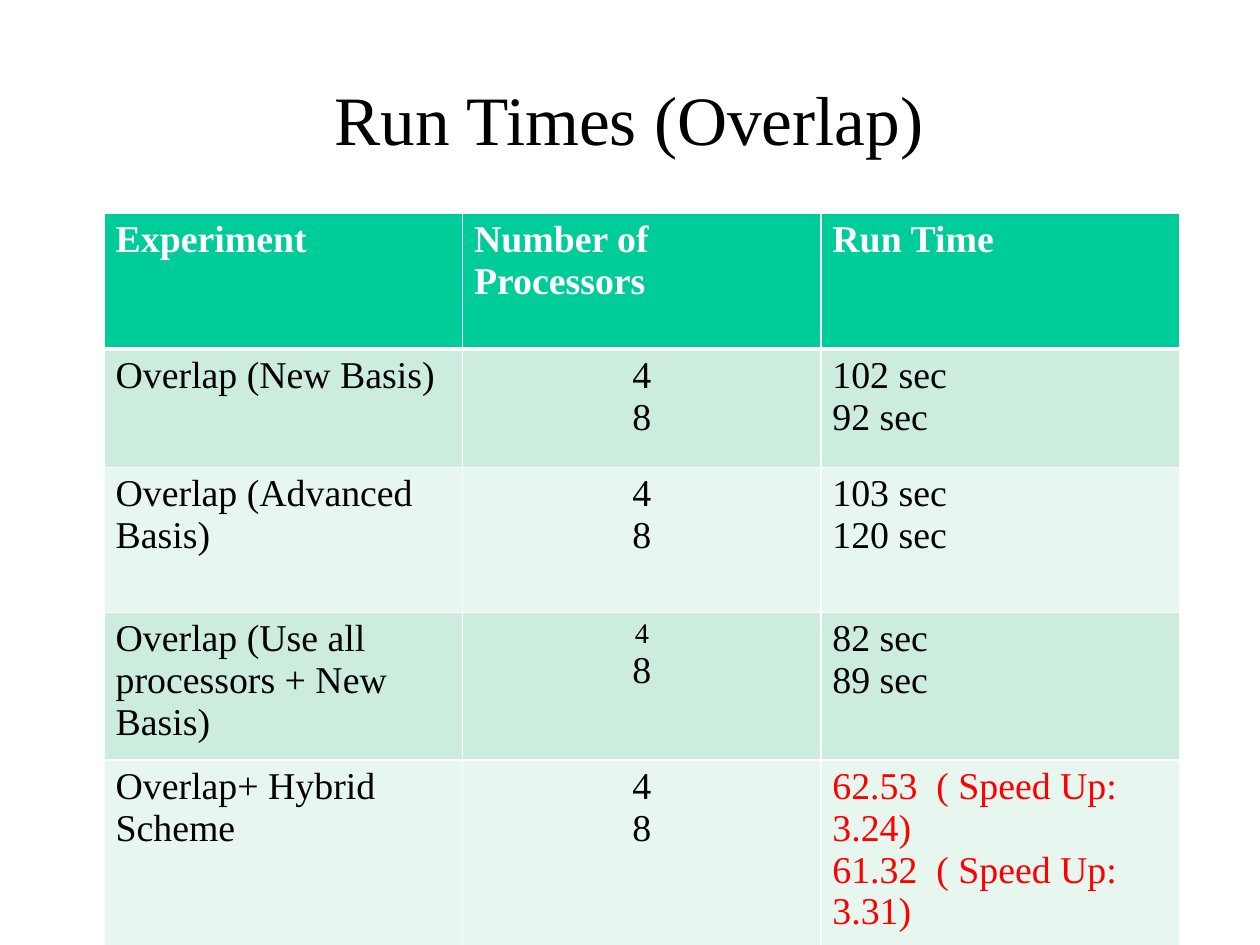
from lxml import etree
from pptx import Presentation
from pptx.dml.color import RGBColor
from pptx.enum.text import MSO_ANCHOR, PP_ALIGN
from pptx.oxml.ns import qn
from pptx.util import Emu, Pt

LEFT, CENTER = PP_ALIGN.LEFT, PP_ALIGN.CENTER
MIDDLE = MSO_ANCHOR.MIDDLE
PX = 9144  # 100 px to the inch
FONT = "Times New Roman"

BLACK = RGBColor(0x00, 0x00, 0x00)
WHITE = RGBColor(0xFF, 0xFF, 0xFF)
RED = RGBColor(0xFF, 0x00, 0x00)
GREEN = RGBColor(0x00, 0xCC, 0x99)
MINT = RGBColor(0xCC, 0xEC, 0xDE)
PALE = RGBColor(0xE7, 0xF6, 0xEF)

HEADS = ["Experiment", "Number of Processors", "Run Time"]
# Experiment, then run times on 4 and 8 processors
RUNS = [
    ("Overlap (New Basis)", ["102 sec", "92 sec"]),
    ("Overlap (Advanced Basis)", ["103 sec", "120 sec"]),
    ("Overlap (Use all processors + New Basis)", ["82 sec", "89 sec"]),
    ("Overlap+ Hybrid Scheme",
     ["62.53  ( Speed Up: 3.24)", "61.32  ( Speed Up: 3.31)"]),
]
COUNTS = ["4", "8"]
HEIGHTS = [120, 104, 128, 104, 104]
SMALL, HYBRID = 3, 4  # rows with their own text style


def px(n):
    return Emu(n * PX)


class Deck:
    def __init__(self, wide, high):
        self.prs = Presentation()
        self.prs.slide_width, self.prs.slide_height = px(wide), px(high)
        self.slide = self.prs.slides.add_slide(self.prs.slide_layouts[6])

    def text(self, frame, lines, sizes, color=BLACK, bold=False, align=LEFT):
        frame.word_wrap = True
        for i, (line, size) in enumerate(zip(lines, sizes)):
            para = frame.add_paragraph() if i else frame.paragraphs[0]
            para.alignment = align
            run = para.add_run()
            run.text = line
            font = run.font
            font.name, font.size, font.bold = FONT, Pt(size), bold
            font.color.rgb = color

    def title(self, x, y, w, h, words):
        box = self.slide.shapes.add_textbox(px(x), px(y), px(w), px(h))
        box.text_frame.vertical_anchor = MIDDLE
        self.text(box.text_frame, [words], [44], align=CENTER)

    def table(self, x, y, w, heights, cols):
        frame = self.slide.shapes.add_table(
            len(heights), cols, px(x), px(y), px(w), px(sum(heights)))
        grid = frame.table
        grid.first_row = grid.horz_banding = False
        for row, high in zip(grid.rows, heights):
            row.height = px(high)
        for col in grid.columns:
            col.width = px(w // cols)
        return grid

    def cell(self, cell, fill, top=1, bottom=1):
        props = cell._tc.get_or_add_tcPr()
        for side, width in zip("LRTB", (1, 1, top, bottom)):
            line = etree.SubElement(props, qn(f"a:ln{side}"), w=str(Pt(width)))
            paint = etree.SubElement(line, qn("a:solidFill"))
            etree.SubElement(paint, qn("a:srgbClr"), val=str(WHITE))
        cell.fill.solid()
        cell.fill.fore_color.rgb = fill


def main():
    deck = Deck(1111, 833)
    deck.title(83, 58, 944, 92, "Run Times (Overlap)")
    grid = deck.table(92, 188, 948, HEIGHTS, len(HEADS))

    # Header row
    for c, head in enumerate(HEADS):
        cell = grid.cell(0, c)
        deck.cell(cell, GREEN, bottom=3)
        deck.text(cell.text_frame, [head], [24], WHITE, bold=True)

    # Result rows
    for r, (name, times) in enumerate(RUNS, 1):
        sizes = [18 if r == SMALL else 24, 24]
        ink = RED if r == HYBRID else BLACK
        parts = [([name], [24], BLACK, LEFT),
                 (COUNTS, sizes, BLACK, CENTER),
                 (times, [24, 24], ink, LEFT)]
        for c, (lines, points, color, align) in enumerate(parts):
            cell = grid.cell(r, c)
            deck.cell(cell, MINT if r % 2 else PALE, top=3 if r == 1 else 1)
            deck.text(cell.text_frame, lines, points, color, align=align)

    deck.prs.save("out.pptx")


if __name__ == "__main__":
    main()
